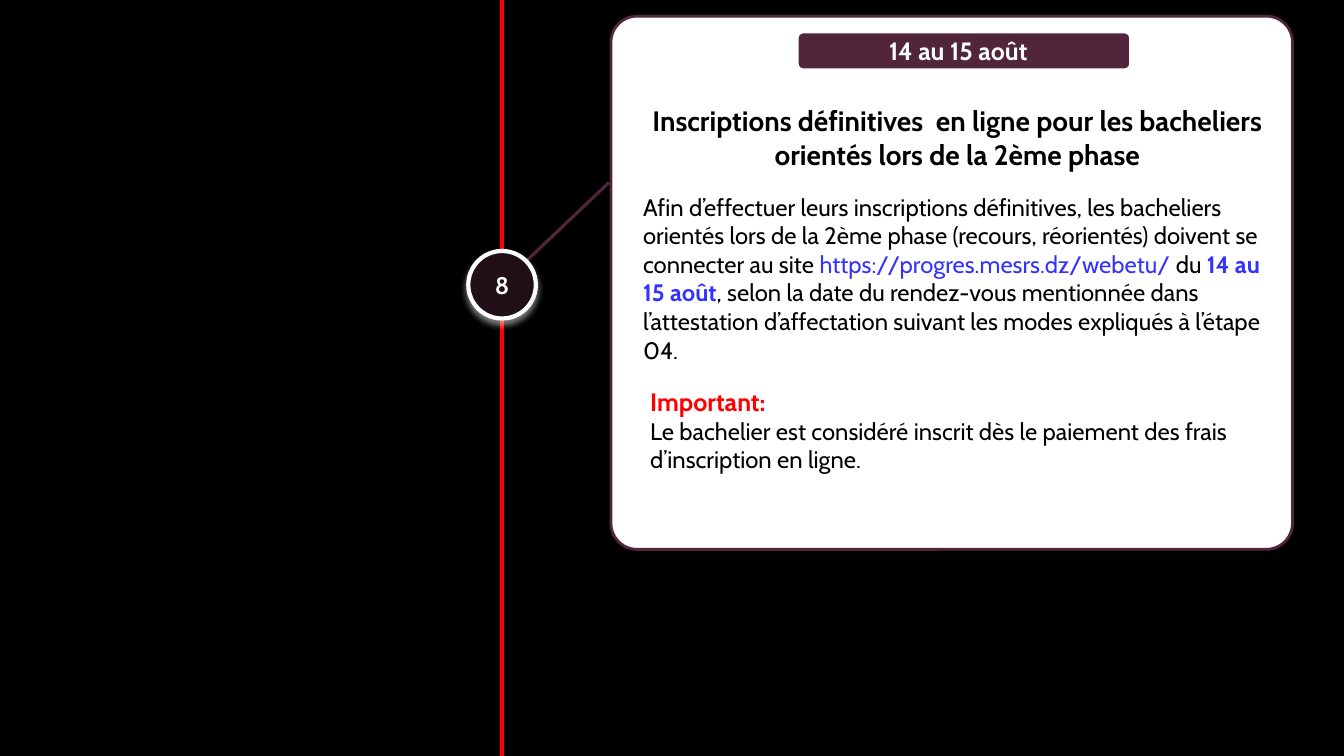
from dataclasses import dataclass

from lxml import etree
from pptx import Presentation
from pptx.dml.color import RGBColor
from pptx.enum.shapes import MSO_CONNECTOR, MSO_SHAPE
from pptx.enum.text import MSO_ANCHOR, PP_ALIGN
from pptx.oxml import parse_xml
from pptx.oxml.ns import nsdecls, qn
from pptx.util import Inches, Pt


@dataclass(frozen=True)
class Theme:
    font: str = "Cabin"
    black: str = "000000"
    white: str = "FFFFFF"
    red: str = "FF0000"
    blue: str = "3333FF"
    plum: str = "51253A"
    dark_plum: str = "210F17"
    title: float = 20
    heading: float = 18
    badge: float = 17.9
    number: float = 17.1
    body: float = 17


T = Theme()


def add_run(p, text, size=T.body, color=T.black, bold=False):
    r = p.add_run()
    r.text = text
    r.font.name = T.font
    r.font.size = Pt(size)
    r.font.bold = bold
    r.font.color.rgb = RGBColor.from_string(color)


def add_line(s, start, end, color, width):
    ends = [Inches(v) for v in (*start, *end)]
    line = s.shapes.add_connector(MSO_CONNECTOR.STRAIGHT, *ends)
    line.line.color.rgb = RGBColor.from_string(color)
    line.line.width = Pt(width)
    etree.SubElement(line._element.spPr, qn("a:effectLst"))


def add_box(s, kind, box, fill, line, width, radius=None):
    sp = s.shapes.add_shape(kind, *[Inches(v) for v in box])
    sp.shadow.inherit = False
    sp.fill.solid()
    sp.fill.fore_color.rgb = RGBColor.from_string(fill)
    sp.line.color.rgb = RGBColor.from_string(line)
    sp.line.width = Pt(width)
    if radius is not None:
        sp.adjustments[0] = radius
    return sp


def add_label(sp, text, size, right=0.1):
    tf = sp.text_frame
    tf.word_wrap = True
    tf.vertical_anchor = MSO_ANCHOR.MIDDLE
    tf.margin_right = Inches(right)
    p = tf.paragraphs[0]
    p.alignment = PP_ALIGN.CENTER
    add_run(p, text, size=size, color=T.white, bold=True)


def add_glow(sp, color):
    effects = sp._element.spPr.find(qn("a:effectLst"))
    effects.append(parse_xml(
        f'<a:outerShdw {nsdecls("a")} blurRad="{Pt(4.5)}" dist="{Pt(3)}" '
        f'dir="5400000" rotWithShape="0"><a:srgbClr val="{color}">'
        '<a:alpha val="48000"/></a:srgbClr></a:outerShdw>'))


def add_text(s, box, paragraphs, align=PP_ALIGN.LEFT):
    tf = s.shapes.add_textbox(*[Inches(v) for v in box]).text_frame
    tf.word_wrap = True
    for i, runs in enumerate(paragraphs):
        p = tf.add_paragraph() if i else tf.paragraphs[0]
        p.alignment = align
        for text, style in runs:
            add_run(p, text, **style)


def add_timeline(s):
    x, top, size = 4.98, 2.49, 0.67
    add_line(s, (x, 0), (x, top), T.red, 3)
    add_line(s, (x, top + size), (x, 7.5), T.red, 3)
    add_line(s, (5.22, 2.59), (6.04, 1.81), T.plum, 2.25)
    step = add_box(s, MSO_SHAPE.OVAL, (x - size / 2, top, size, size),
                   T.dark_plum, T.white, 3)
    add_glow(step, T.white)
    add_label(step, "8", T.number)


def add_card(s):
    add_box(s, MSO_SHAPE.ROUNDED_RECTANGLE, (6.06, 0.16, 6.76, 5.29),
            T.white, T.plum, 2, radius=0.049)
    badge = add_box(s, MSO_SHAPE.ROUNDED_RECTANGLE, (7.9, 0.31, 3.32, 0.39),
                    T.plum, T.white, 3)
    add_label(badge, "14 au 15 août", T.badge, right=0.21)
    add_text(s, (6.17, 0.98, 6.65, 0.77), [[
        ("Inscriptions définitives  en ligne pour les bacheliers "
         "orientés lors de la 2ème phase", dict(size=T.title, bold=True)),
    ]], align=PP_ALIGN.CENTER)
    add_text(s, (6.28, 1.86, 6.43, 1.82), [[
        ("Afin d’effectuer leurs inscriptions définitives, les bacheliers "
         "orientés lors de la 2ème phase (recours, réorientés) doivent se "
         "connecter au site ", {}),
        ("https://progres.mesrs.dz/webetu/ ", dict(color=T.blue)),
        ("du ", {}),
        ("14 au 15 août", dict(color=T.blue, bold=True)),
        (", selon la date du rendez-vous mentionnée dans l’attestation "
         "d’affectation suivant les modes expliqués à l’étape 04.", {}),
    ]])
    add_text(s, (6.35, 3.78, 6.42, 0.98), [
        [("Important:", dict(size=T.heading, color=T.red, bold=True))],
        [("Le bachelier est considéré inscrit dès le paiement des frais "
          "d’inscription en ligne.", {})],
    ])


def main():
    prs = Presentation()
    prs.slide_width, prs.slide_height = Inches(13.33), Inches(7.5)
    s = prs.slides.add_slide(prs.slide_layouts[6])
    s.background.fill.solid()
    s.background.fill.fore_color.rgb = RGBColor.from_string(T.black)
    add_timeline(s)
    add_card(s)
    prs.save("out.pptx")


if __name__ == "__main__":
    main()
